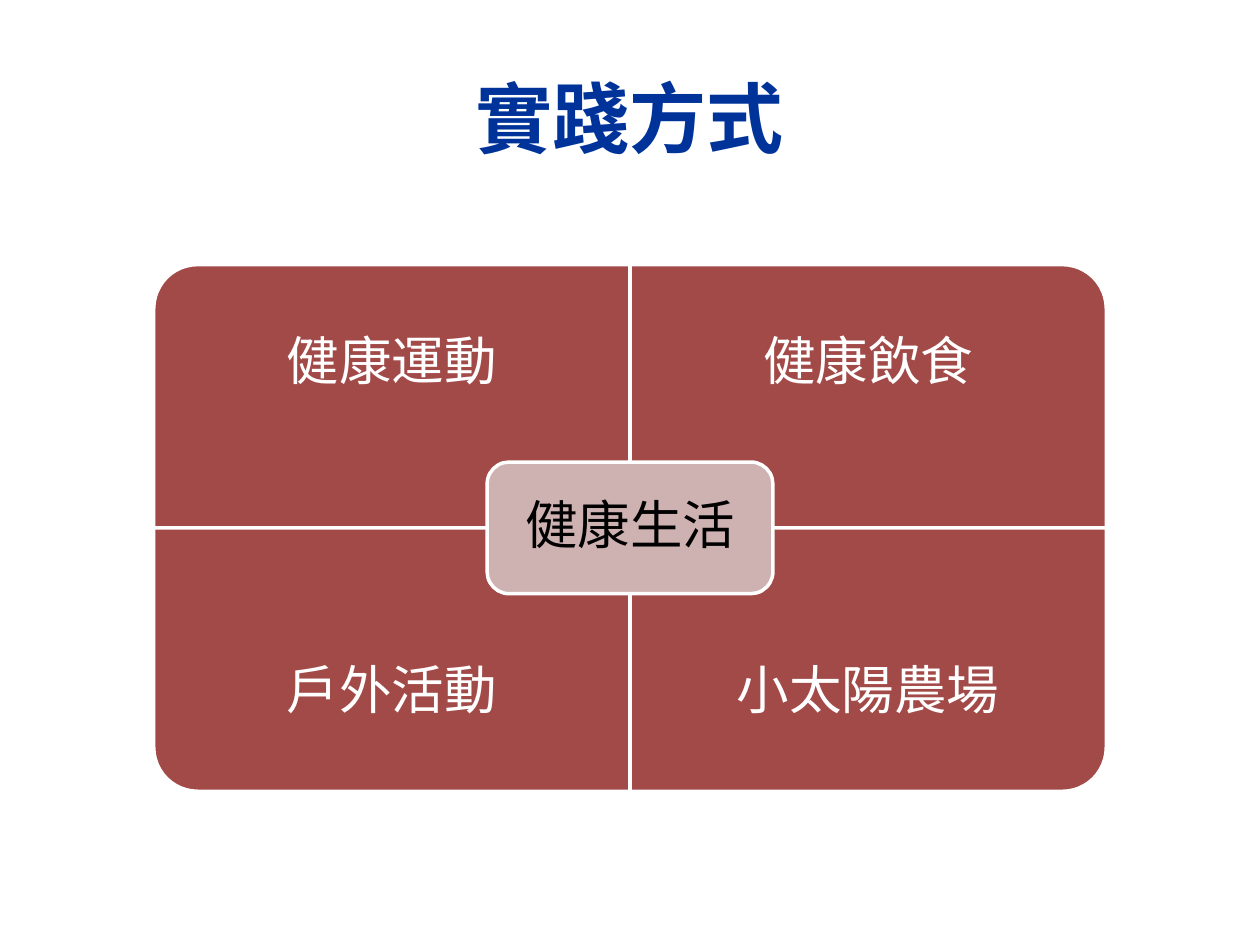
from lxml import etree
from pptx import Presentation
from pptx.dml.color import RGBColor
from pptx.enum.shapes import MSO_SHAPE
from pptx.enum.text import MSO_ANCHOR, PP_ALIGN
from pptx.oxml import parse_xml
from pptx.util import Inches, Pt

ROUND_ONE = MSO_SHAPE.ROUND_1_RECTANGLE
ROUNDED = MSO_SHAPE.ROUNDED_RECTANGLE
MIDDLE = MSO_ANCHOR.MIDDLE
CENTER = PP_ALIGN.CENTER
FONT = "Karla"
COLORS = {"title": "00339A", "outline": "F2F2F2", "quadrant": "A24A48",
          "core": "CEB2B1", "white": "FFFFFF", "black": "000000"}


def style_panel(shape, fill):
    shape.shadow.inherit = False
    shape.fill.solid()
    shape.fill.fore_color.rgb = RGBColor.from_string(COLORS[fill])
    shape.line.color.rgb = RGBColor.from_string(COLORS["white"])
    shape.line.width = Pt(2)


def write_label(box, text, color, inset):
    frame = box.text_frame
    frame.text = text
    frame.word_wrap = True
    frame.vertical_anchor = MIDDLE
    frame.margin_left = frame.margin_right = Inches(inset)
    frame.margin_top = frame.margin_bottom = Inches(inset)
    para = frame.paragraphs[0]
    para.alignment = CENTER
    para.line_spacing = 0.9
    para.space_after = Pt(10.5)
    font = para.runs[0].font
    font.name = FONT
    font.size = Pt(30)
    font.color.rgb = RGBColor.from_string(COLORS[color])


deck = Presentation()
deck.slide_width, deck.slide_height = Inches(10), Inches(7.5)
page = deck.slides.add_slide(deck.slide_layouts[5])

# Title
title = page.shapes.title
title.left, title.top = Inches(0.5), Inches(0.3)
title.width, title.height = Inches(9), Inches(1.25)
title.text_frame.text = "實踐方式"
title.text_frame.vertical_anchor = MIDDLE
para = title.text_frame.paragraphs[0]
para.alignment = CENTER
span = para.runs[0]
span.font.name = FONT
span.font.size = Pt(44)
span.font.bold = True
span.font.color.rgb = RGBColor.from_string(COLORS["title"])
outline = parse_xml(
    '<a:ln xmlns:a="http://schemas.openxmlformats.org/drawingml/2006/main" w="1905">'
    f'<a:solidFill><a:srgbClr val="{COLORS["outline"]}"/></a:solidFill></a:ln>')
span.font._element.insert(0, outline)

# Matrix of four quadrants, each turned so its round corner faces outwards
matrix = page.shapes.add_group_shape().shapes
LEFT, TOP, WIDTH, HEIGHT = 1.22, 2.1, 3.78, 2.09
LABEL_HEIGHT = HEIGHT * 0.75
quadrants = [("健康運動", 0, 0, 270), ("健康飲食", 1, 0, 0),
             ("戶外活動", 0, 1, 180), ("小太陽農場", 1, 1, 90)]

for text, column, row, turn in quadrants:
    left, top = LEFT + column * WIDTH, TOP + row * HEIGHT
    wide, high = (HEIGHT, WIDTH) if turn in (90, 270) else (WIDTH, HEIGHT)
    panel = matrix.add_shape(
        ROUND_ONE, Inches(left + (WIDTH - wide) / 2), Inches(top + (HEIGHT - high) / 2),
        Inches(wide), Inches(high))
    panel.rotation = turn
    style_panel(panel, "quadrant")
    label_top = top + row * (HEIGHT - LABEL_HEIGHT)
    label = matrix.add_textbox(Inches(left), Inches(label_top),
                               Inches(WIDTH), Inches(LABEL_HEIGHT))
    write_label(label, text, "white", 0.23)

# Core theme over the crossing
core_width, core_height = WIDTH * 0.6, HEIGHT / 2
core = matrix.add_shape(
    ROUNDED, Inches(LEFT + WIDTH - core_width / 2), Inches(TOP + HEIGHT - core_height / 2),
    Inches(core_width), Inches(core_height))
style_panel(core, "core")
write_label(core, "健康生活", "black", 0.12)

deck.save("out.pptx")
